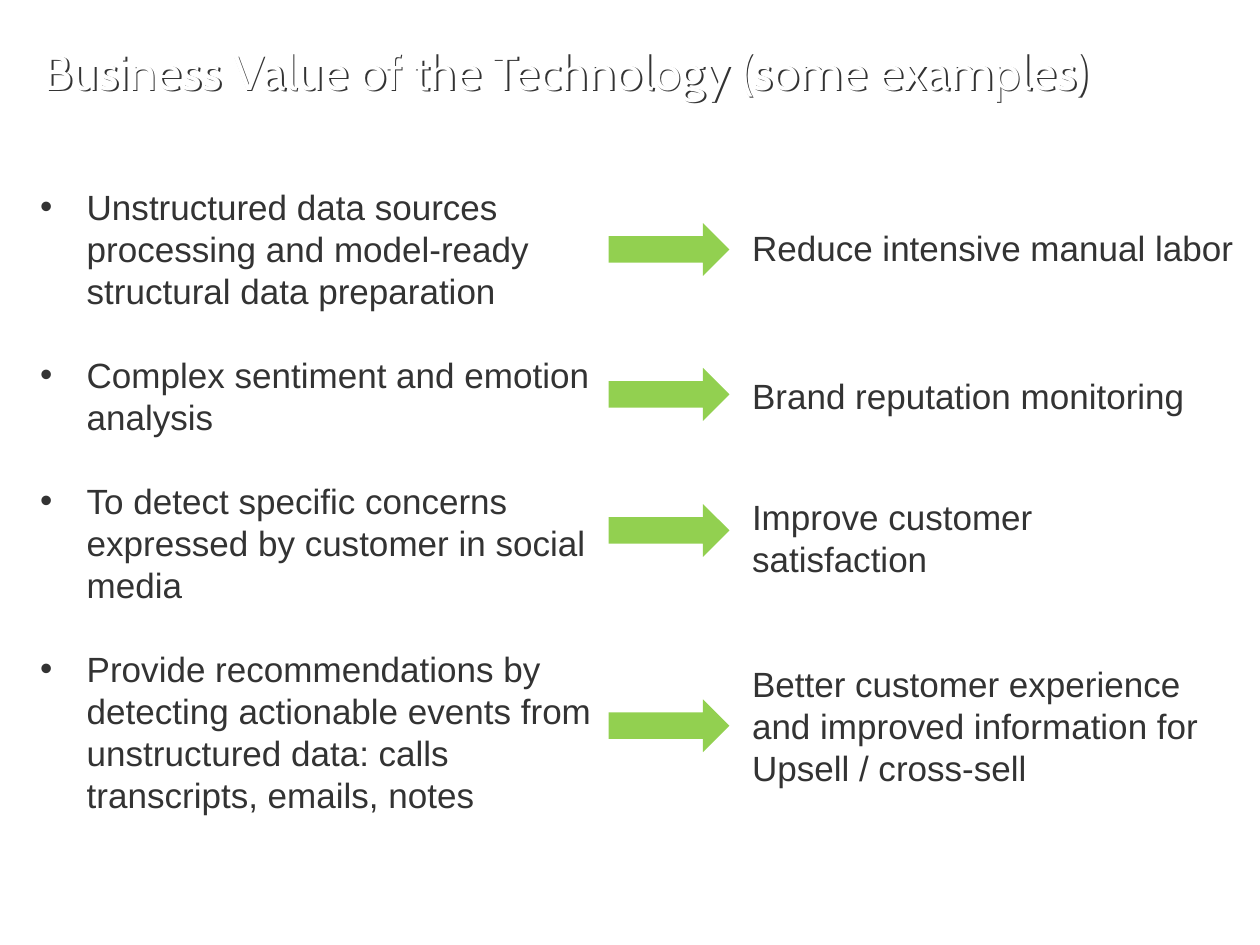
"""Build the slide that pairs technology uses with their business value."""
from lxml import etree
from pptx import Presentation
from pptx.dml.color import RGBColor
from pptx.enum.shapes import MSO_SHAPE
from pptx.enum.text import MSO_ANCHOR
from pptx.oxml.ns import qn
from pptx.util import Inches, Pt

COLORS = {"title": "FFFFFF", "text": "333333", "arrow": "92D050", "shadow": "333333"}


def add_text(s, lines, box, size=20, font="Arial", color="text",
             anchor=MSO_ANCHOR.TOP, bullet=False, gap=0):
    """Add a wrapped text box with one paragraph for each line."""
    sp = s.shapes.add_textbox(*[Inches(v) for v in box])
    tf = sp.text_frame
    tf.word_wrap = True
    tf.vertical_anchor = anchor
    for i, line in enumerate(lines):
        p = tf.paragraphs[0] if i == 0 else tf.add_paragraph()
        p.line_spacing = Pt(size * 1.2)
        if i and gap:
            p.space_before = Pt(gap)
        if bullet:
            pPr = p._p.get_or_add_pPr()
            pPr.set("marL", str(Inches(0.37)))
            pPr.set("indent", str(-Inches(0.37)))
            etree.SubElement(pPr, qn("a:buFont")).set("typeface", "Arial")
            etree.SubElement(pPr, qn("a:buChar")).set("char", "•")
        r = p.add_run()
        r.text = line
        r.font.size = Pt(size)
        r.font.name = font
        r.font.color.rgb = RGBColor.from_string(COLORS[color])
    return sp


prs = Presentation()
prs.slide_width, prs.slide_height = Inches(10), Inches(7.5)
s = prs.slides.add_slide(prs.slide_layouts[6])

title = add_text(s, ["Business Value of the Technology (some examples)"],
                 (0.25, 0.17, 9.42, 0.78), size=28, font="Cabin", color="title",
                 anchor=MSO_ANCHOR.MIDDLE)
title.shadow.inherit = False
effects = title._element.spPr.find(qn("a:effectLst"))
outer = etree.SubElement(effects, qn("a:outerShdw"), blurRad="0",
                         dist=str(Inches(0.02)), dir="2700000", algn="tl")
etree.SubElement(outer, qn("a:srgbClr"), val=COLORS["shadow"])

uses = [
    "Unstructured data sources processing and model-ready structural data preparation",
    "Complex sentiment and emotion analysis",
    "To detect specific concerns expressed by customer in social media",
    "Provide recommendations by detecting actionable events from "
    "unstructured data: calls transcripts, emails, notes",
]
add_text(s, uses, (0.22, 1.42, 4.8, 5.48), bullet=True, gap=24)

values = [
    (1.77, 1.75, ["Reduce intensive manual labor"]),
    (2.92, 2.92, ["Brand reputation monitoring"]),
    (4, 3.88, ["Improve customer", "satisfaction"]),
    (5.55, 5.21, ["Better customer experience", "and improved information for",
                  "Upsell / cross-sell"]),
]
for arrow_top, text_top, lines in values:
    sp = s.shapes.add_shape(MSO_SHAPE.RIGHT_ARROW, Inches(4.83), Inches(arrow_top),
                            Inches(0.96), Inches(0.42))
    sp.shadow.inherit = False
    sp.fill.solid()
    sp.fill.fore_color.rgb = RGBColor.from_string(COLORS["arrow"])
    sp.line.fill.background()
    add_text(s, lines, (5.87, text_top, 4.08, 0.1 + len(lines) / 3))

prs.save("out.pptx")
